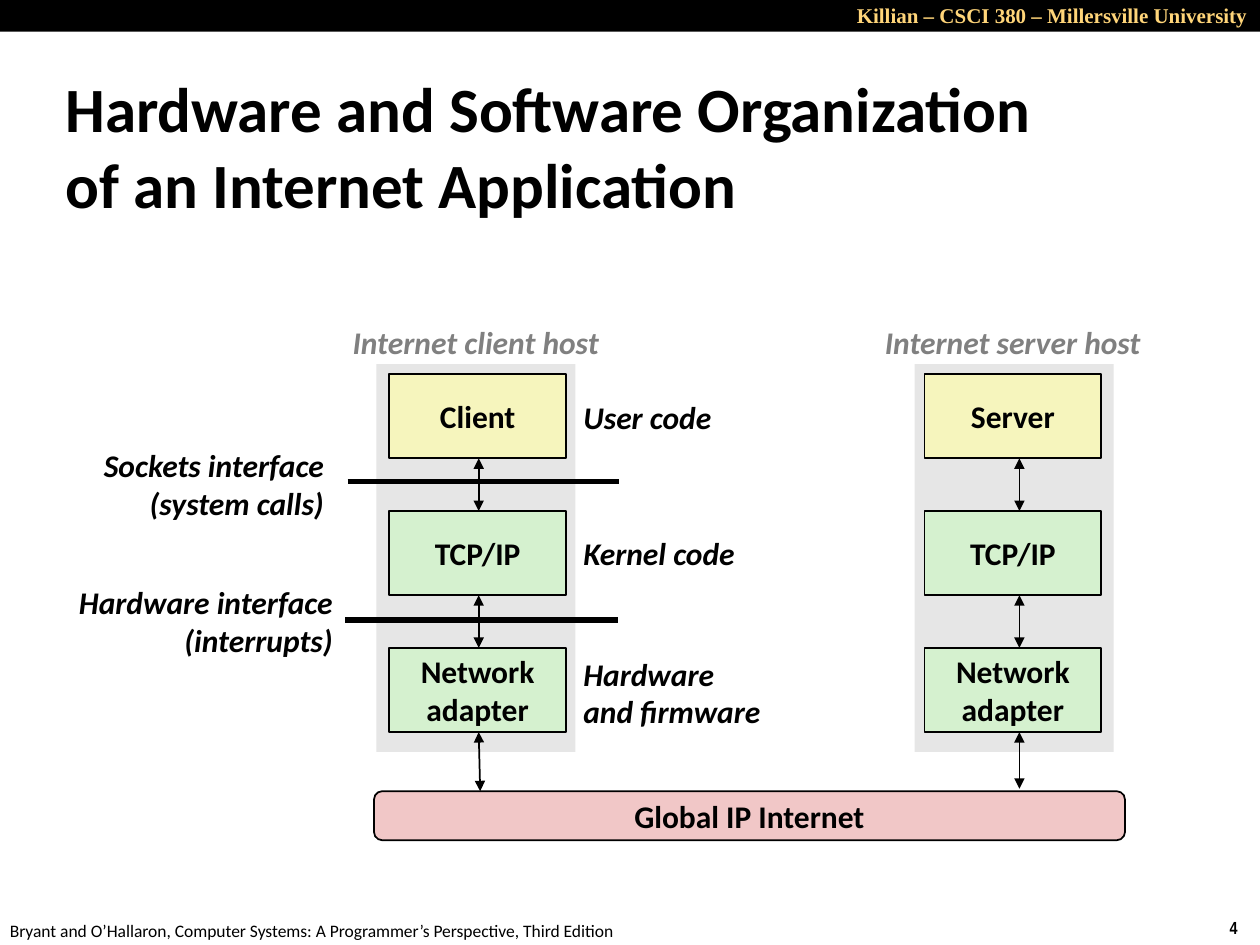
from lxml import etree
from pptx import Presentation
from pptx.dml.color import RGBColor
from pptx.enum import shapes, text
from pptx.oxml import ns
from pptx.util import Cm, Pt

BLACK = RGBColor(0, 0, 0)
GOLD = RGBColor(0xFF, 0xD5, 0x79)
GRAY = RGBColor(0x80, 0x80, 0x80)
PANEL = RGBColor(0xE6, 0xE6, 0xE6)
YELLOW = RGBColor(0xF6, 0xF5, 0xBD)
GREEN = RGBColor(0xD5, 0xF1, 0xCF)
PINK = RGBColor(0xF1, 0xC7, 0xC7)

LEFT, CENTER, RIGHT = text.PP_ALIGN.LEFT, text.PP_ALIGN.CENTER, text.PP_ALIGN.RIGHT
TOP, MIDDLE = text.MSO_ANCHOR.TOP, text.MSO_ANCHOR.MIDDLE
RECT, ROUND = shapes.MSO_SHAPE.RECTANGLE, shapes.MSO_SHAPE.ROUNDED_RECTANGLE

HEADER = "Killian – CSCI 380 – Millersville University"
FOOTER = "Bryant and O’Hallaron, Computer Systems: A Programmer’s Perspective, Third Edition"
TITLE = "Hardware and Software Organization\vof an Internet Application"
HOSTS = [
    dict(name="Internet client host", app="Client", name_at=(6.81, 5.56),
         panel=7.59, box=7.85, arrow=9.65, net=(9.68, 15.95)),
    dict(name="Internet server host", app="Server", name_at=(17.53, 5.77),
         panel=18.44, box=18.64, arrow=20.55, net=(20.55, 15.9)),
]
LAYERS = [(None, YELLOW), ("TCP/IP", GREEN), ("Network\nadapter", GREEN)]
CODE_NOTES = [
    ("User code", 7.9, 3.12, 1.02),
    ("Kernel code", 10.64, 3.61, 1.02),
    ("Hardware\nand firmware", 13.06, 4.14, 1.8),
]
INTERFACES = [
    ("Sockets interface\n(system calls)", (1.78, 8.86, 5, 1.8), (7.01, 12.47, 9.7)),
    ("Hardware interface\n(interrupts)", (1.27, 11.61, 5.69, 1.8), (6.96, 12.45, 12.5)),
]
BOX_TOP, BOX_STEP, BOX_W, BOX_H = 7.54, 2.76, 3.56, 1.7

prs = Presentation()
prs.slide_width, prs.slide_height = Cm(25.4), Cm(19.05)
s = prs.slides.add_slide(prs.slide_layouts[6])


def write(sp, words, size=18, align=CENTER, anchor=MIDDLE, color=BLACK,
          font="Calibri", bold=True, italic=False, wrap=False):
    tf = sp.text_frame
    tf.text = words
    tf.word_wrap = wrap
    tf.vertical_anchor = anchor
    for p in tf.paragraphs:
        p.alignment = align
        f = p.font
        f.name, f.size, f.bold, f.italic = font, Pt(size), bold, italic
        f.color.rgb = color


def label(words, at, **style):
    write(s.shapes.add_textbox(*map(Cm, at)), words, **style)


def block(at, fill, words="", kind=RECT, outline=True):
    sp = s.shapes.add_shape(kind, *map(Cm, at))
    sp.shadow.inherit = False
    sp.fill.solid()
    sp.fill.fore_color.rgb = fill
    if outline:
        sp.line.color.rgb = BLACK
        sp.line.width = Pt(1)
    else:
        sp.line.fill.background()
    if words:
        write(sp, words)
    return sp


def line(x1, y1, x2, y2, width=1, arrows=False):
    c = s.shapes.add_connector(shapes.MSO_CONNECTOR.STRAIGHT, *map(Cm, (x1, y1, x2, y2)))
    c.line.color.rgb = BLACK
    c.line.width = Pt(width)
    if arrows:
        ln = c.line._get_or_add_ln()
        for end in ("a:headEnd", "a:tailEnd"):
            etree.SubElement(ln, ns.qn(end), type="triangle")
    etree.SubElement(c._element.spPr, ns.qn("a:effectLst"))


block((0, 0, 25.4, 0.64), BLACK, outline=False)
label(HEADER, (11.43, -0.08, 13.97, 0.76), size=12, align=RIGHT, anchor=TOP,
      color=GOLD, font="Times New Roman", wrap=True)
label("4", (24.54, 18.36, 0.86, 0.69), size=10, align=LEFT, anchor=TOP, font="Arial Narrow")
label(FOOTER, (-0.05, 18.42, 12.9, 0.69), size=10, align=LEFT, anchor=TOP, bold=False)
label(TITLE, (1.07, 1.4, 22.58, 3.05), size=36, align=LEFT, wrap=True)

for host in HOSTS:
    block((host["panel"], 7.34, 4.01, 7.82), PANEL, outline=False)
    x, (net_x, net_y) = host["arrow"], host["net"]
    for i, (words, fill) in enumerate(LAYERS):
        top = BOX_TOP + i * BOX_STEP
        block((host["box"], top, BOX_W, BOX_H), fill, words or host["app"])
        last = i == len(LAYERS) - 1
        end = (net_x, net_y) if last else (x, top + BOX_STEP)
        line(x, top + BOX_H, *end, arrows=True)
    left, width = host["name_at"]
    label(host["name"], (left, 6.38, width, 1.02), color=GRAY, italic=True)

cloud = block((7.54, 15.95, 15.14, 0.99), PINK, "Global IP Internet", ROUND)
cloud.adjustments[0] = 0.17

for words, top, width, height in CODE_NOTES:
    label(words, (11.51, top, width, height), align=LEFT, italic=True)

for words, at, (x1, x2, y) in INTERFACES:
    label(words, at, align=RIGHT, italic=True)
    line(x1, y, x2, y, width=3)

prs.save("out.pptx")
